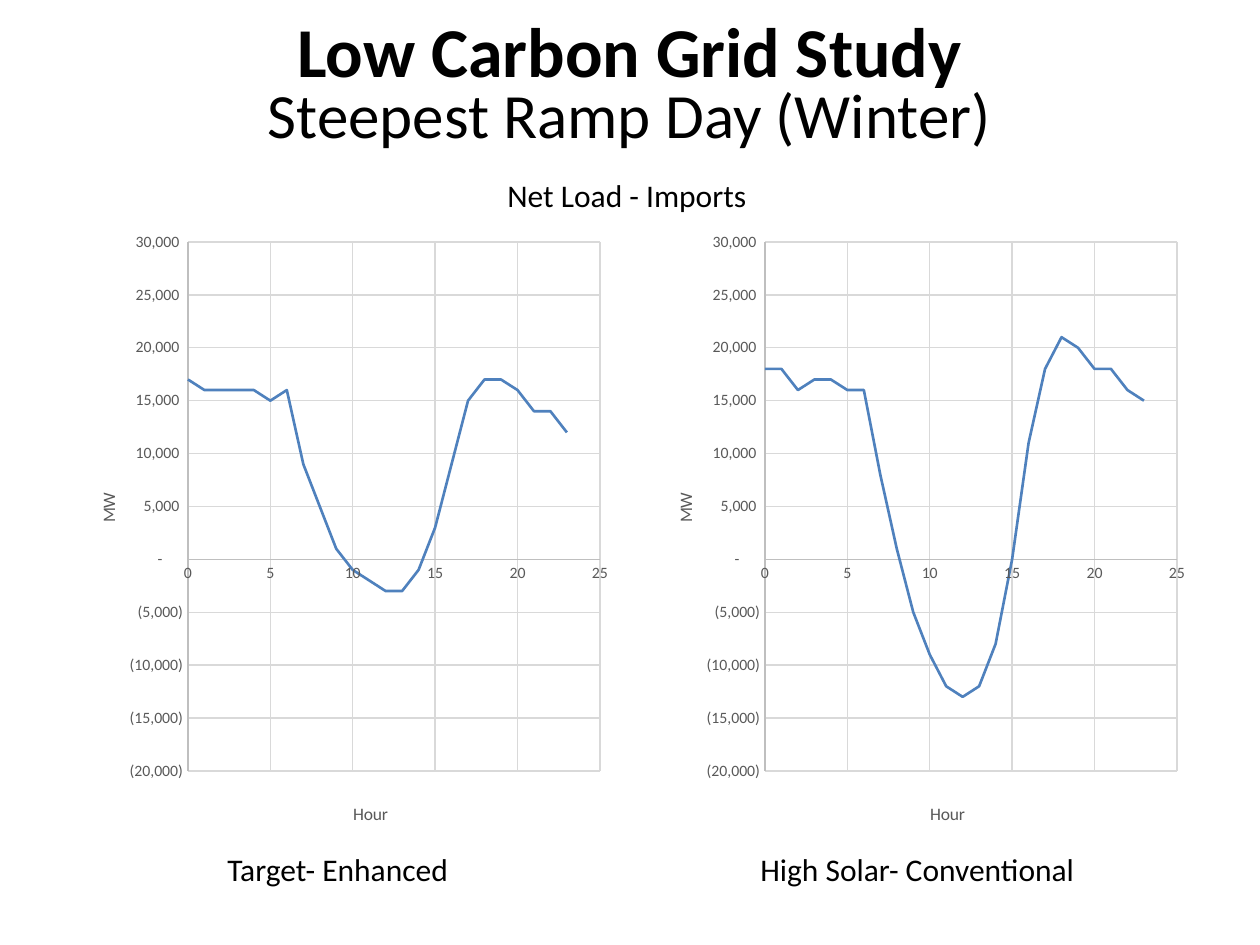
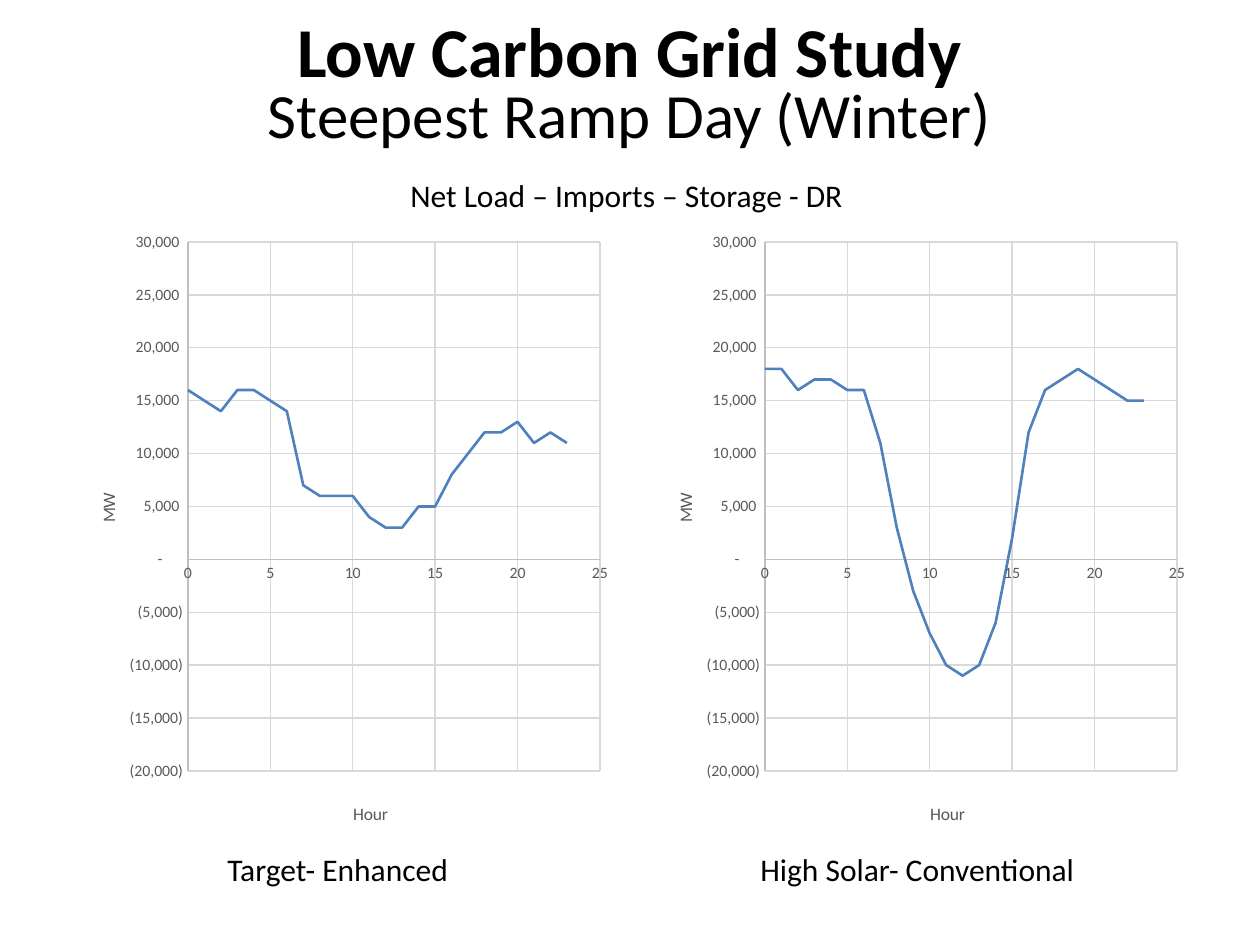
from lxml import etree
from pptx import Presentation
from pptx.chart.data import XyChartData
from pptx.dml.color import RGBColor
from pptx.enum.chart import XL_CHART_TYPE as ChartType, XL_TICK_MARK as TickMark
from pptx.enum.text import MSO_AUTO_SIZE as AutoSize, PP_ALIGN as Align
from pptx.oxml import parse_xml
from pptx.oxml.ns import nsdecls, qn
from pptx.util import Pt

EMU_PER_PX = 914400 / 126
FONT = "Calibri"
COLORS = {"text": "000000", "label": "595959", "axis": "BFBFBF",
          "grid": "D9D9D9", "curve": "4F81BD"}
RGB = {name: RGBColor.from_string(value) for name, value in COLORS.items()}
MW_FORMAT = r'_(* #,##0_);_(* \(#,##0\);_(* "-"??_);_(@_)'

CHART_TOP, CHART_WIDTH, CHART_HEIGHT = 220, 557, 624
CHART_LEFTS = (63, 640)
CAPTIONS = (("Target- Enhanced", 215, 252), ("High Solar- Conventional", 748, 341))

# Each slide: subtitle with its left and width, then hourly GW for both scenarios
SLIDES = (
    ("Net Load - Imports", 495, 268, (
        (17, 16, 16, 16, 16, 15, 16, 9, 5, 1, -1, -2,
         -3, -3, -1, 3, 9, 15, 17, 17, 16, 14, 14, 12),
        (18, 18, 16, 17, 17, 16, 16, 8, 1, -5, -9, -12,
         -13, -12, -8, 0, 11, 18, 21, 20, 18, 18, 16, 15))),
    ("Net Load – Imports – Storage - DR", 398, 465, (
        (16, 15, 14, 16, 16, 15, 14, 7, 6, 6, 6, 4,
         3, 3, 5, 5, 8, 10, 12, 12, 13, 11, 12, 11),
        (18, 18, 16, 17, 17, 16, 16, 11, 3, -3, -7, -10,
         -11, -10, -6, 2, 12, 16, 17, 18, 17, 16, 15, 15))),
)


def px(*lengths):
    """Turn pixel lengths into a list of EMU."""
    return [round(length * EMU_PER_PX) for length in lengths]


def add_text(shapes, text, box, size, bold=False, align=Align.LEFT):
    frame = shapes.add_textbox(*px(*box)).text_frame
    frame.word_wrap = False
    frame.auto_size = AutoSize.SHAPE_TO_FIT_TEXT
    paragraph = frame.paragraphs[0]
    paragraph.alignment = align
    run = paragraph.add_run()
    run.text = text
    run.font.name, run.font.size, run.font.bold = FONT, Pt(size), bold
    run.font.color.rgb = RGB["text"]


presentation = Presentation()
presentation.slide_width, presentation.slide_height = px(1260, 945)

for subtitle, subtitle_left, subtitle_width, scenarios in SLIDES:
    slide = presentation.slides.add_slide(presentation.slide_layouts[6])
    for caption, left, width in CAPTIONS:
        add_text(slide.shapes, caption, (left, 844, width, 50), 18)
    add_text(slide.shapes, subtitle, (subtitle_left, 170, subtitle_width, 50), 18)
    title = slide.shapes.add_group_shape()
    add_text(title.shapes, "Steepest Ramp Day (Winter)", (137, 69, 985, 89), 36,
             align=Align.CENTER)
    add_text(title.shapes, "Low Carbon Grid Study", (212, 1, 835, 97), 40, True,
             Align.CENTER)

    for chart_left, loads in zip(CHART_LEFTS, scenarios):
        data = XyChartData()
        series_data = data.add_series("Series 1")
        for hour, load in enumerate(loads):
            series_data.add_data_point(hour, load * 1000)
        chart = slide.shapes.add_chart(
            ChartType.XY_SCATTER_SMOOTH_NO_MARKERS,
            *px(chart_left, CHART_TOP, CHART_WIDTH, CHART_HEIGHT), data).chart
        chart.has_legend = chart.has_title = False
        chart.font.name, chart.font.size = FONT, Pt(10)
        chart.font.color.rgb = RGB["text"]
        chart.plots[0].vary_by_categories = False
        series = chart.plots[0].series[0]
        series.smooth = True
        series.format.line.width = Pt(1.5)
        series.format.line.color.rgb = RGB["curve"]

        hour_axis, load_axis = chart.category_axis, chart.value_axis
        axes = ((hour_axis, "Hour", 0, 25, 5, "General"),
                (load_axis, "MW", -20000, 30000, 5000, MW_FORMAT))
        for axis, name, low, high, step, number_format in axes:
            axis.minimum_scale, axis.maximum_scale, axis.major_unit = low, high, step
            axis.major_tick_mark = axis.minor_tick_mark = TickMark.NONE
            axis.has_major_gridlines = True
            for line, color in ((axis.format.line, "axis"),
                                (axis.major_gridlines.format.line, "grid")):
                line.width = Pt(0.75)
                line.color.rgb = RGB[color]
            labels = axis.tick_labels
            labels.number_format = number_format
            labels.number_format_is_linked = False
            labels.font.name, labels.font.size = FONT, Pt(9)
            labels.font.color.rgb = RGB["label"]
            run = axis.axis_title.text_frame.paragraphs[0].add_run()
            run.text = name
            run.font.name, run.font.size, run.font.bold = FONT, Pt(10), False
            run.font.color.rgb = RGB["label"]
        load_axis.axis_title.text_frame._txBody.bodyPr.set("rot", "-5400000")

        # Fixed places inside the chart, in px from its top left corner
        layouts = ((chart._chartSpace.chart.plotArea, (125, 22, 412, 529)),
                   (hour_axis.axis_title._element, (287, 579)),
                   (load_axis.axis_title._element, (31, 270)))
        for element, place in layouts:
            for old_layout in element.findall(qn("c:layout")):
                element.remove(old_layout)
            layout = parse_xml(f"<c:layout {nsdecls('c')}><c:manualLayout/></c:layout>")
            settings = [("xMode", "edge"), ("yMode", "edge")]
            if len(place) == 4:
                settings.insert(0, ("layoutTarget", "inner"))
            for key, length, whole in zip("xywh", place, (CHART_WIDTH, CHART_HEIGHT) * 2):
                settings.append((key, f"{length / whole:.4f}"))
            for tag, value in settings:
                etree.SubElement(layout[0], qn(f"c:{tag}")).set("val", value)
            text = element.find(qn("c:tx"))
            element.insert(0 if text is None else 1, layout)

presentation.save("out.pptx")
